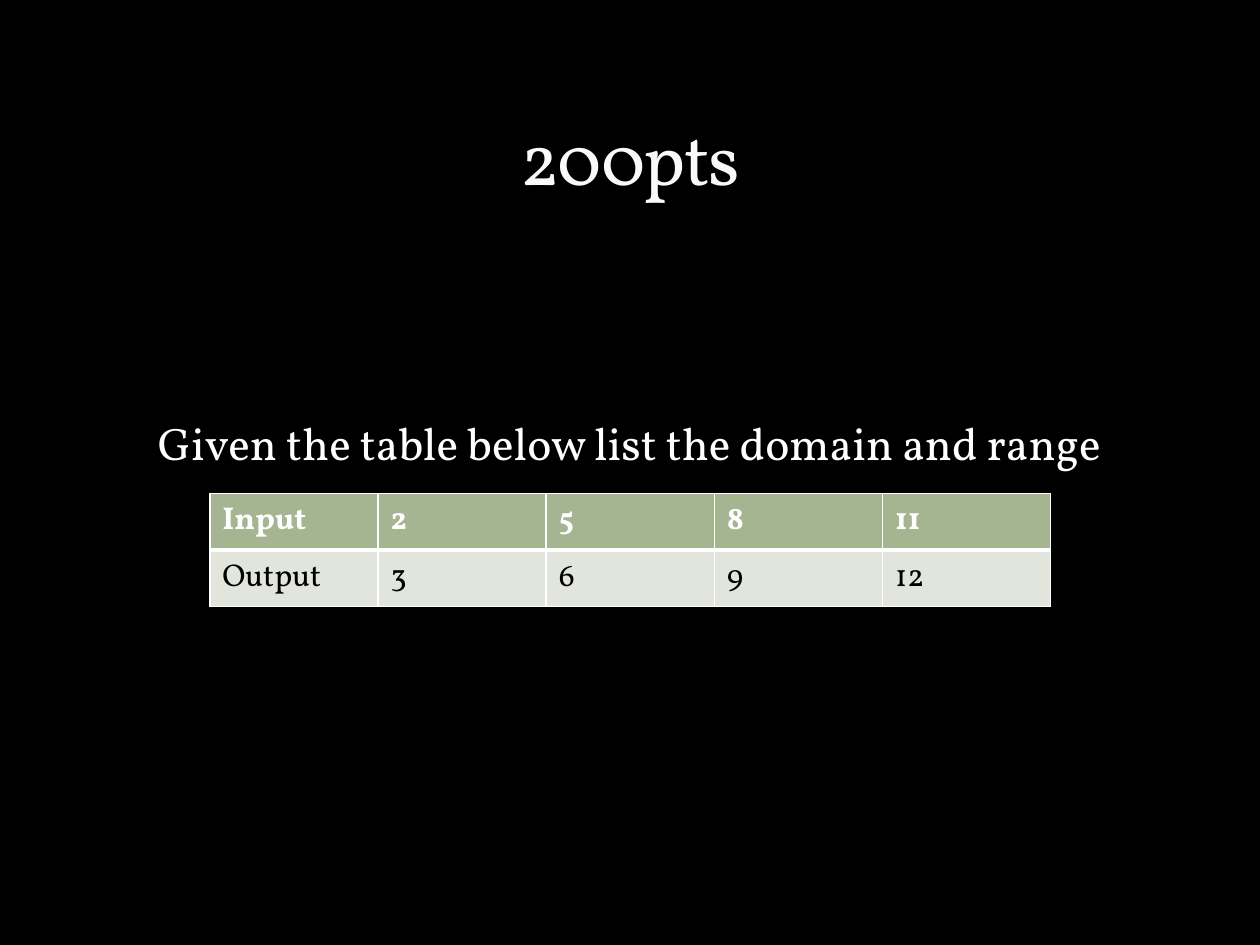
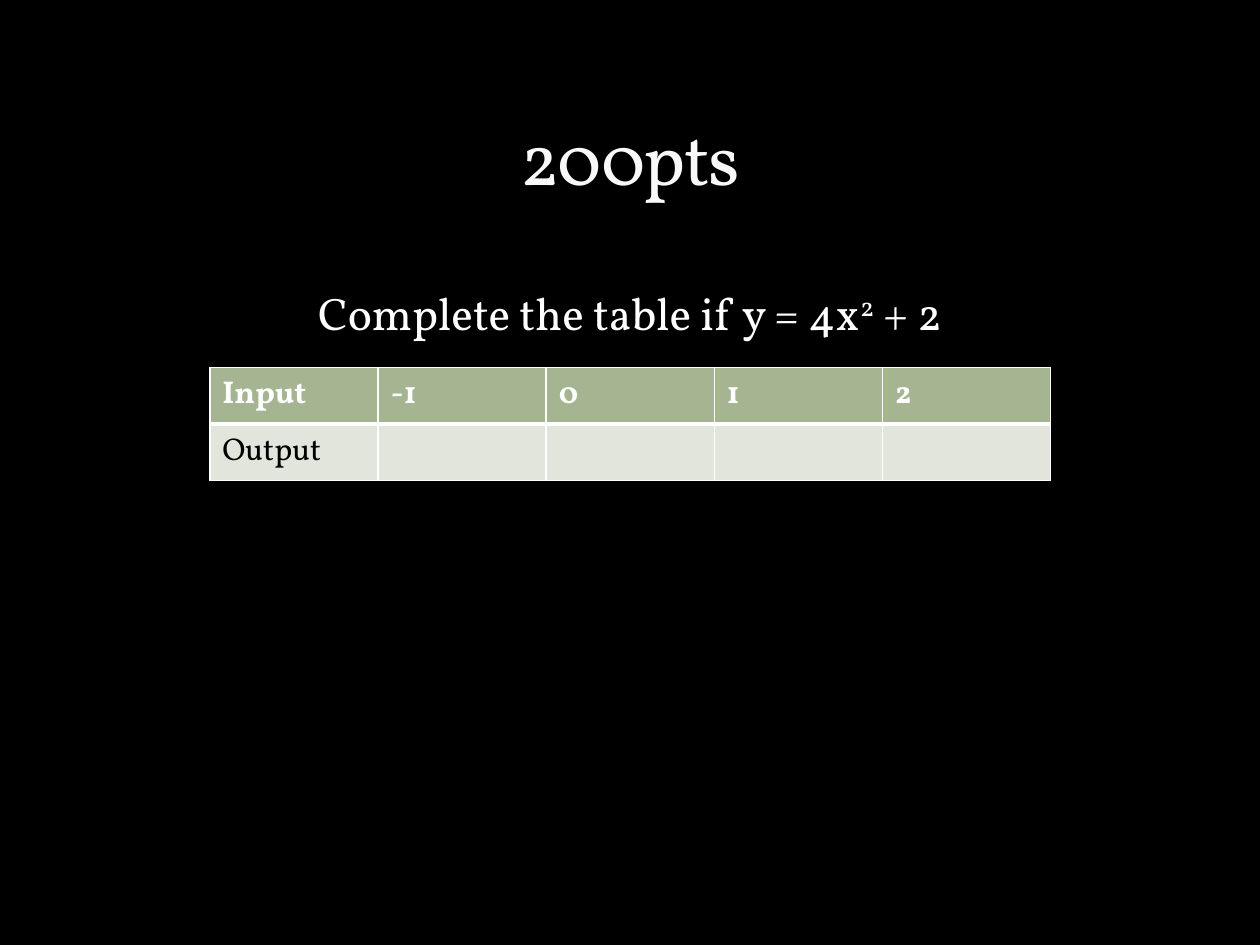
from dataclasses import dataclass

from lxml import etree
from pptx import Presentation
from pptx.dml.color import RGBColor
from pptx.enum.text import MSO_ANCHOR, MSO_AUTO_SIZE, PP_ALIGN
from pptx.oxml import parse_xml
from pptx.oxml.ns import nsdecls, qn
from pptx.util import Cm, Pt

CENTER = PP_ALIGN.CENTER
TOP, BOTTOM = MSO_ANCHOR.TOP, MSO_ANCHOR.BOTTOM
NO_AUTOFIT = MSO_AUTO_SIZE.NONE

QUESTIONS = [
    {
        "points": "200pts",
        "prompt": [("Given the table below list the domain and range", False)],
        "prompt_drop": 4.12,
        "table_top": 9.95,
        "values": [("Input", "2", "5", "8", "11"), ("Output", "3", "6", "9", "12")],
    },
    {
        "points": "200pts",
        "prompt": [("Complete the table if y = 4x", False), ("2", True), (" + 2", False)],
        "prompt_drop": 1.5,
        "table_top": 7.41,
        "values": [("Input", "-1", "0", "1", "2"), ("Output", "", "", "", "")],
    },
]


@dataclass(frozen=True)
class Theme:
    font: str = "Vollkorn"
    background: str = "000000"
    title: str = "F9F9F9"
    title_outline: str = "3C4422"
    text: str = "FFFFFF"
    border: str = "FFFFFF"
    header_fill: str = "A5B592"
    output_fill: str = "E1E5DC"
    output_text: str = "000000"
    title_size: int = 42
    prompt_size: int = 26
    cell_size: int = 18


THEME = Theme()
TITLE_BOX = (1.27, 0.66, 22.86, 3.38)
PROMPT_BOX = (1.27, 4.24, 22.86, 12.7)
TABLE_LEFT, COLUMN_WIDTH, ROW_HEIGHT = 4.23, 3.39, 1.14


def place(placeholder, box, anchor):
    placeholder.left, placeholder.top, placeholder.width, placeholder.height = map(Cm, box)
    frame = placeholder.text_frame
    frame.word_wrap = True
    frame.auto_size = NO_AUTOFIT
    frame.vertical_anchor = anchor
    return frame


def style(run, size, color, bold=False):
    run.font.name = THEME.font
    run.font.size = Pt(size)
    run.font.bold = bold
    run.font.color.rgb = RGBColor.from_string(color)


def add_title(slide, points):
    frame = place(slide.shapes.title, TITLE_BOX, BOTTOM)
    frame.text = points
    frame.margin_bottom = 0
    heading = frame.paragraphs[0]
    heading.alignment = CENTER
    style(heading.runs[0], THEME.title_size, THEME.title)
    properties = heading.runs[0]._r.get_or_add_rPr()
    properties.set("spc", "-100")
    properties.insert(0, parse_xml(
        f'<a:ln {nsdecls("a")} w="3175"><a:solidFill><a:srgbClr val="{THEME.title_outline}">'
        '<a:alpha val="25000"/></a:srgbClr></a:solidFill></a:ln>'))


def add_prompt(slide, pieces, drop):
    frame = place(slide.placeholders[1], PROMPT_BOX, TOP)
    frame.margin_top = Cm(drop)
    prompt = frame.paragraphs[0]
    prompt.alignment = CENTER
    prompt.space_before = Pt(0)
    properties = prompt._p.get_or_add_pPr()
    properties.set("marL", "0")
    properties.set("indent", "0")
    etree.SubElement(properties, qn("a:buNone"))
    for words, raised in pieces:
        run = prompt.add_run()
        run.text = words
        style(run, THEME.prompt_size, THEME.text)
        if raised:
            run._r.get_or_add_rPr().set("baseline", "30000")


def set_borders(cell, top, bottom):
    properties = cell._tc.get_or_add_tcPr()
    widths = {"lnL": 1, "lnR": 1, "lnT": top, "lnB": bottom}
    for position, (side, width) in enumerate(widths.items()):
        properties.insert(position, parse_xml(
            f'<a:{side} {nsdecls("a")} w="{Pt(width)}"><a:solidFill>'
            f'<a:srgbClr val="{THEME.border}"/></a:solidFill></a:{side}>'))


def add_values(slide, values, top):
    columns = len(values[0])
    grid = slide.shapes.add_table(
        len(values), columns, Cm(TABLE_LEFT), Cm(top),
        Cm(COLUMN_WIDTH * columns), Cm(ROW_HEIGHT * len(values))).table
    grid.horz_banding = False
    for column in grid.columns:
        column.width = Cm(COLUMN_WIDTH)
    looks = [(THEME.header_fill, THEME.text, True, 1, 3),
             (THEME.output_fill, THEME.output_text, False, 3, 1)]
    for r, (row, look) in enumerate(zip(values, looks)):
        fill, color, bold, upper, lower = look
        grid.rows[r].height = Cm(ROW_HEIGHT)
        for c, value in enumerate(row):
            cell = grid.cell(r, c)
            cell.fill.solid()
            cell.fill.fore_color.rgb = RGBColor.from_string(fill)
            set_borders(cell, upper, lower)
            if value:
                cell.text_frame.text = value
                style(cell.text_frame.paragraphs[0].runs[0], THEME.cell_size, color, bold)


def main():
    deck = Presentation()
    deck.slide_width, deck.slide_height = Cm(25.4), Cm(19.05)
    backdrop = deck.slide_master.background.fill
    backdrop.solid()
    backdrop.fore_color.rgb = RGBColor.from_string(THEME.background)
    for question in QUESTIONS:
        slide = deck.slides.add_slide(deck.slide_layouts[1])
        add_title(slide, question["points"])
        add_prompt(slide, question["prompt"], question["prompt_drop"])
        add_values(slide, question["values"], question["table_top"])
    deck.save("out.pptx")


if __name__ == "__main__":
    main()
